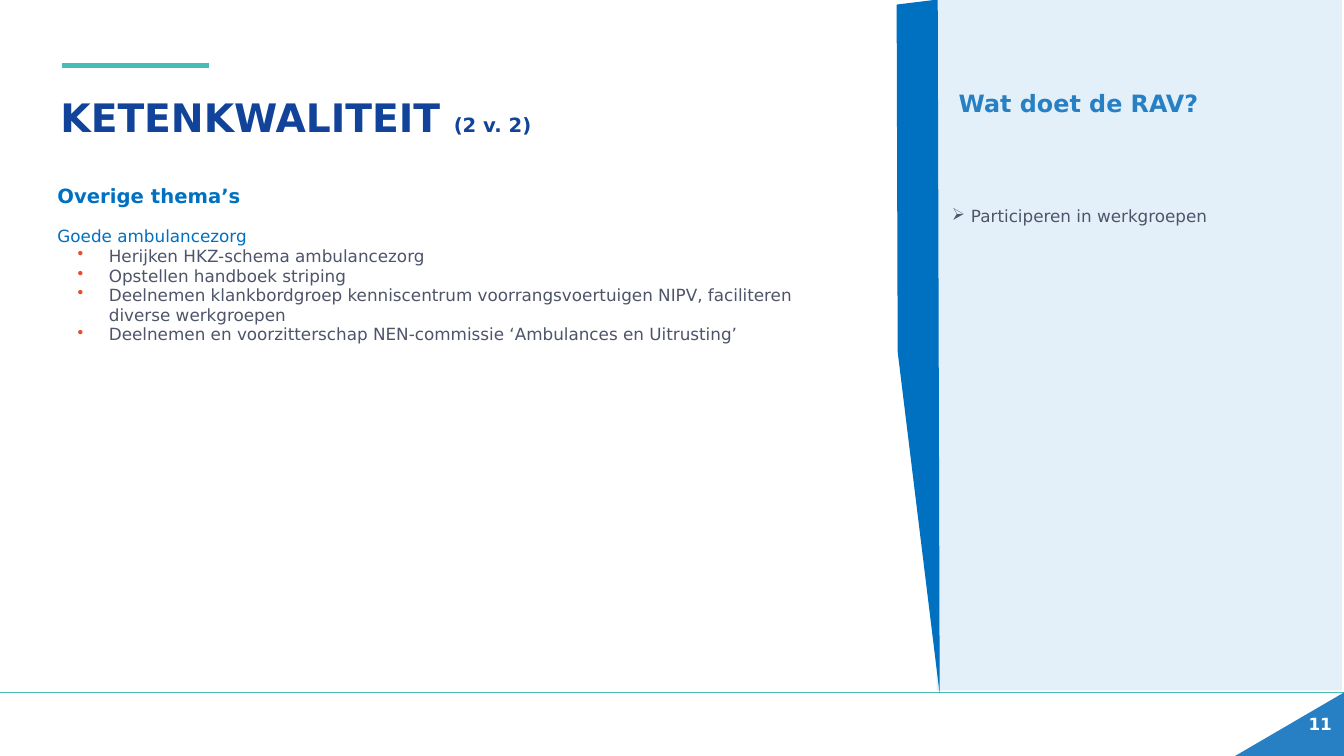
import pptx
import pptx.util
import pptx.dml.color
import pptx.enum.shapes
import pptx.enum.text
import pptx.oxml
import pptx.oxml.ns
from lxml import etree

Inches = pptx.util.Inches
Pt = pptx.util.Pt
qn = pptx.oxml.ns.qn
KIND = pptx.enum.shapes.MSO_SHAPE
ALIGN = pptx.enum.text.PP_ALIGN
ANCHOR = pptx.enum.text.MSO_ANCHOR

FACE = "DejaVu Sans"
WIDE, HIGH, FLOOR = 13.33, 7.5, 6.87
HUES = {
    "teal": "48BDB5",
    "navy": "12439A",
    "blue": "0070C0",
    "sky": "2780C3",
    "pale": "D1E6F6",
    "grey": "4E5469",
    "red": "E84B2D",
    "white": "FFFFFF",
}
THEMES = [
    "Herijken HKZ-schema ambulancezorg",
    "Opstellen handboek striping",
    "Deelnemen klankbordgroep kenniscentrum voorrangsvoertuigen NIPV, faciliteren\vdiverse werkgroepen",
    "Deelnemen en voorzitterschap NEN-commissie ‘Ambulances en Uitrusting’",
]


def color(hue):
    return pptx.dml.color.RGBColor.from_string(HUES[hue])


def paint(shape, hue):
    shape.shadow.inherit = False
    shape.fill.solid()
    shape.fill.fore_color.rgb = color(hue)
    shape.line.fill.background()


def style(para, hue, size=None, bold=False):
    font = para.font
    font.name = FACE
    font.bold = bold
    font.color.rgb = color(hue)
    if size:
        font.size = Pt(size)


def bullet(para, mark, left, hang, hue=None):
    props = para._p.get_or_add_pPr()
    props.set("marL", str(Inches(left)))
    props.set("indent", str(-Inches(hang)))
    if hue:
        tint = etree.SubElement(props, qn("a:buClr"))
        etree.SubElement(tint, qn("a:srgbClr"), val=HUES[hue])
    etree.SubElement(props, qn("a:buChar"), char=mark)


def setup(frame, inset=0):
    frame.word_wrap = True
    frame.margin_left = frame.margin_right = Inches(inset)
    frame.margin_top = frame.margin_bottom = Inches(inset / 2)
    return frame


def textbox(slide, x, y, w, h, inset=0):
    box = slide.shapes.add_textbox(Inches(x), Inches(y), Inches(w), Inches(h))
    return setup(box.text_frame, inset)


def rule(slide, x, y, w, weight):
    line = slide.shapes.add_connector(
        pptx.enum.shapes.MSO_CONNECTOR.STRAIGHT,
        Inches(x), Inches(y), Inches(x + w), Inches(y))
    line.line.color.rgb = color("teal")
    line.line.width = Pt(weight)
    etree.SubElement(line._element.spPr, qn("a:effectLst"))


def footer(slide, x, y, w, h):
    rule(slide, x, y, w, 0.75)
    right, base = x + w, y + h
    pen = slide.shapes.build_freeform(Inches(right), Inches(base))
    pen.add_line_segments([(Inches(right), Inches(y)),
                           (Inches(right - 1.08), Inches(base))])
    paint(pen.convert_to_shape(), "sky")
    frame = textbox(slide, right - 0.52, y + 0.21, 0.4, 0.2)
    frame.vertical_anchor = ANCHOR.MIDDLE
    para = frame.paragraphs[0]
    para.text = "11"
    para.alignment = ALIGN.RIGHT
    style(para, "white", 12, True)


def heading(slide, x, y, w, h):
    rule(slide, x + 0.02, y - 0.33, 1.45, 3.75)
    title = slide.shapes.title
    title.left, title.top = Inches(x), Inches(y)
    title.width, title.height = Inches(w), Inches(h)
    frame = setup(title.text_frame)
    frame.vertical_anchor = ANCHOR.TOP
    para = frame.paragraphs[0]
    para.alignment = ALIGN.LEFT
    para.line_spacing = 0.9
    style(para, "navy", bold=True)
    for text, size in (("KETENKWALITEIT ", 28), ("(2 v. 2)", 14)):
        run = para.add_run()
        run.text = text
        run.font.size = Pt(size)


def topics(slide, x, y, w, h):
    frame = textbox(slide, x, y, w, h)
    head = frame.paragraphs[0]
    head.text = "Overige thema’s"
    style(head, "blue", 14, True)
    sub = frame.add_paragraph()
    sub.text = "Goede ambulancezorg"
    sub.space_before = Pt(14)
    style(sub, "blue", 12)
    for theme in THEMES:
        para = frame.add_paragraph()
        para.text = theme
        bullet(para, "•", 0.51, 0.31, "red")
        style(para, "grey", 12)
    for para in frame.paragraphs:
        para.line_spacing = Pt(14)


def sidebar(slide, x, y, w, h):
    panel = slide.shapes.add_shape(
        KIND.RECTANGLE, Inches(x), Inches(y), Inches(w), Inches(h))
    paint(panel, "pale")
    tint = panel._element.spPr.find(qn("a:solidFill"))[0]
    etree.SubElement(tint, qn("a:alpha"), val="58000")
    stripe = slide.shapes.add_shape(
        KIND.DIAGONAL_STRIPE, Inches(x - 0.39), Inches(y + 0.02),
        Inches(0.82), Inches(h - 0.01))
    paint(stripe, "blue")
    stripe.rotation = 353

    head = textbox(slide, x + 0.12, y + 0.89, w - 0.12, 0.52, 0.1).paragraphs[0]
    head.text = "Wat doet de RAV?"
    head.line_spacing = Pt(16)
    style(head, "sky", 17, True)

    task = textbox(slide, x + 0.15, y + 2.05, w - 0.17, 0.2).paragraphs[0]
    task.text = "Participeren in werkgroepen"
    bullet(task, "➢", 0.19, 0.19)
    task.line_spacing = Pt(14)
    style(task, "grey", 12)


def main():
    deck = pptx.Presentation()
    deck.slide_width, deck.slide_height = Inches(WIDE), Inches(HIGH)
    slide = deck.slides.add_slide(deck.slide_layouts[5])
    footer(slide, 0, FLOOR, WIDE, HIGH - FLOOR)
    heading(slide, 0.6, 0.98, 5.78, 0.42)
    sidebar(slide, 9.29, 0, 4.02, 6.85)
    topics(slide, 0.57, 1.86, 8.22, 1.56)
    deck.save("out.pptx")


if __name__ == "__main__":
    main()
